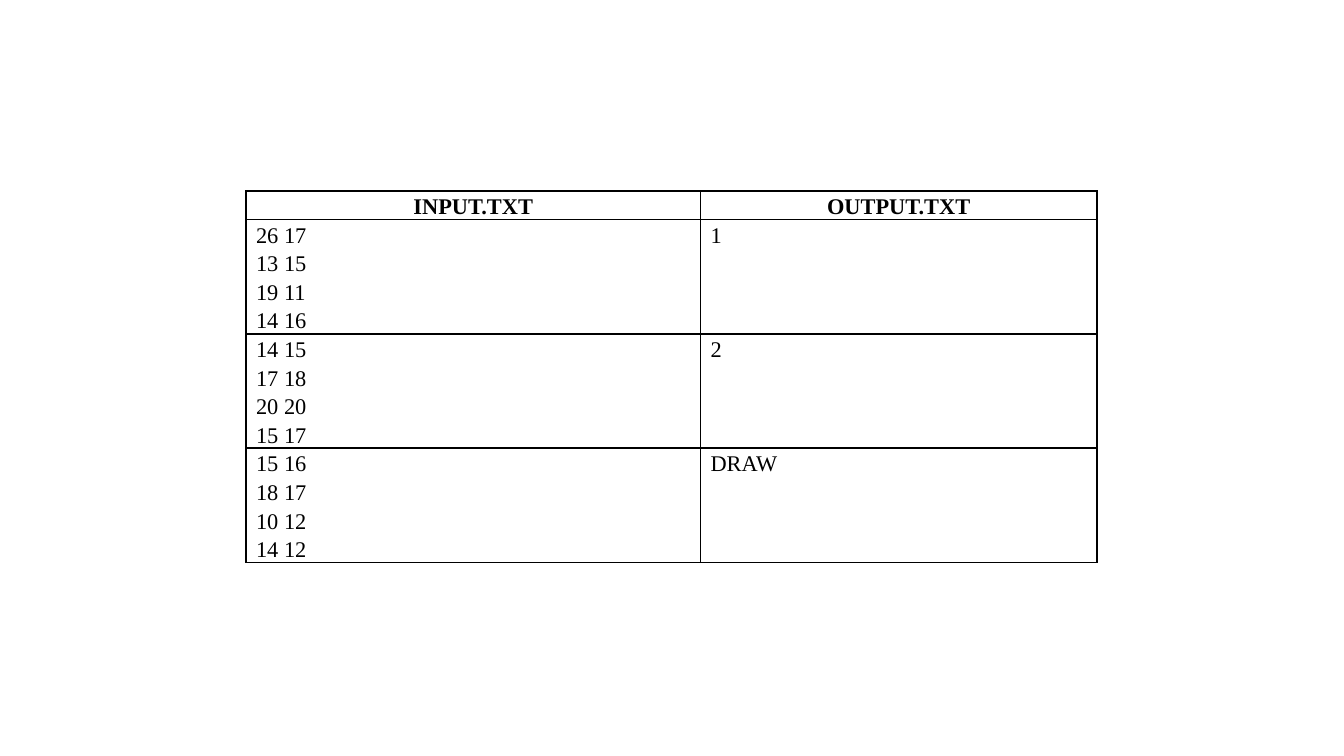
from lxml import etree
from pptx import Presentation
from pptx.dml.color import RGBColor
from pptx.enum.text import PP_ALIGN
from pptx.oxml.ns import qn
from pptx.util import Cm, Pt

LEFT = PP_ALIGN.LEFT
CENTER = PP_ALIGN.CENTER
FONT = "Times New Roman"
BLACK = "000000"
HEADS = ["INPUT.TXT", "OUTPUT.TXT"]
TESTS = [
    ["26 17\n13 15\n19 11\n14 16", "1"],
    ["14 15\n17 18\n20 20\n15 17", "2"],
    ["15 16\n18 17\n10 12\n14 12", "DRAW"],
]
WIDTHS = [8.59, 7.49]
LINE = 0.54


def color(code):
    """Turn a hex string into a colour."""
    return RGBColor.from_string(code)


def edge(cell, code, width):
    """Draw a solid border on all four sides of a cell."""
    props = cell._tc.get_or_add_tcPr()
    for spot, side in enumerate(("lnL", "lnR", "lnT", "lnB")):
        line = etree.Element(qn(f"a:{side}"), w=str(Pt(width)))
        fill = etree.SubElement(line, qn("a:solidFill"))
        etree.SubElement(fill, qn("a:srgbClr"), val=code)
        props.insert(spot, line)


def write(cell, text, bold, align):
    """Fill a cell with styled text, one paragraph per line."""
    cell.margin_left = cell.margin_right = Cm(0.19)
    cell.margin_top = cell.margin_bottom = Cm(0)
    cell.fill.background()
    cell.text_frame.text = text
    for para in cell.text_frame.paragraphs:
        para.alignment = align
        para.line_spacing = 1.15
        for run in para.runs:
            run.font.name = FONT
            run.font.size = Pt(12)
            run.font.bold = bold
            run.font.color.rgb = color(BLACK)
    edge(cell, BLACK, 1)


def grid(slide, left, top):
    """Add the table of sample inputs and outputs."""
    rows = [HEADS] + TESTS
    counts = [row[0].count("\n") + 1 for row in rows]
    frame = slide.shapes.add_table(
        len(rows), len(HEADS), Cm(left), Cm(top),
        Cm(sum(WIDTHS)), Cm(LINE * sum(counts)))
    table = frame.table
    table.horz_banding = False
    for col, width in zip(table.columns, WIDTHS):
        col.width = Cm(width)
    for i, row in enumerate(rows):
        table.rows[i].height = Cm(LINE * counts[i])
        for j, text in enumerate(row):
            write(table.cell(i, j), text, i == 0, LEFT if i else CENTER)


def main():
    """Build the slide and save it."""
    deck = Presentation()
    deck.slide_width = Cm(25.4)
    deck.slide_height = Cm(14.29)
    slide = deck.slides.add_slide(deck.slide_layouts[6])
    grid(slide, 4.65, 3.61)
    deck.save("out.pptx")


if __name__ == "__main__":
    main()
